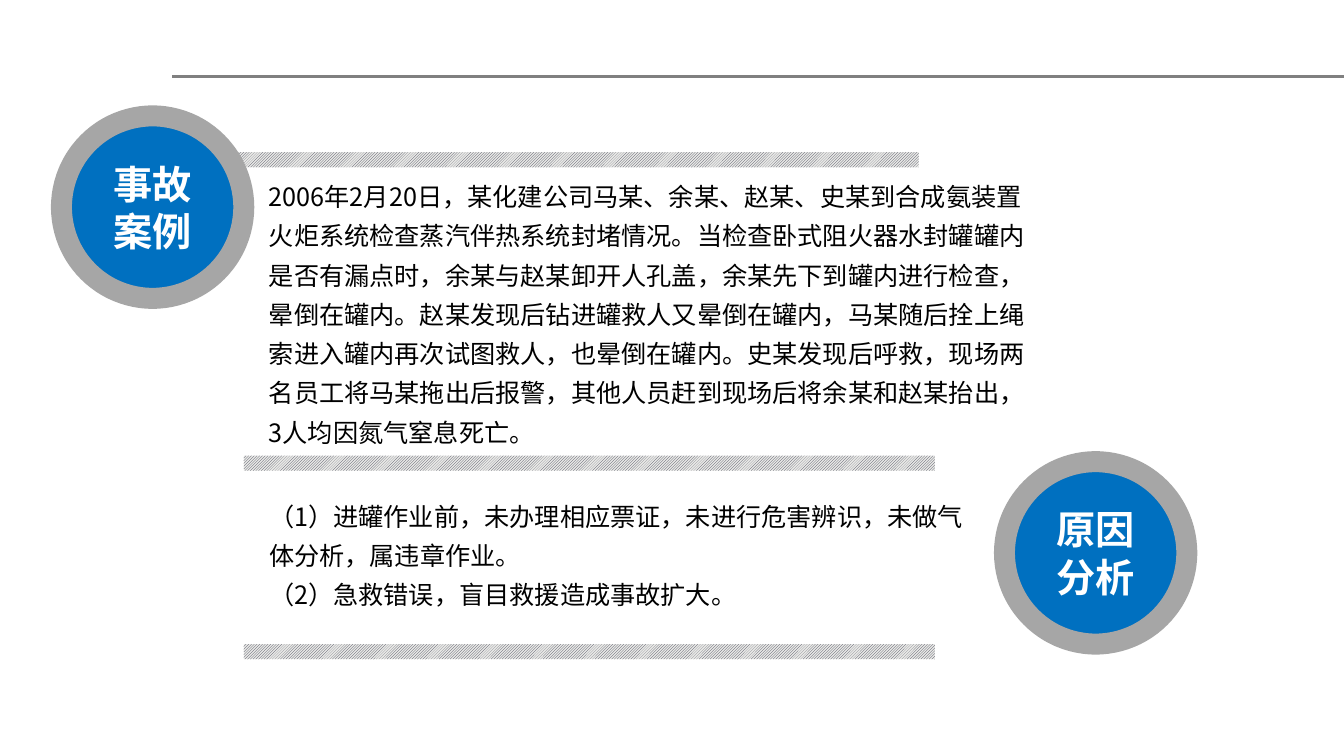
import pptx
import pptx.util
import pptx.dml.color
import pptx.enum.dml
import pptx.enum.shapes
import pptx.enum.text
import pptx.oxml.ns
import lxml.etree

Inches = pptx.util.Inches
Pt = pptx.util.Pt
SHAPE = pptx.enum.shapes.MSO_SHAPE
ALIGN = pptx.enum.text.PP_ALIGN
qn = pptx.oxml.ns.qn

FACE = "Noto Sans CJK SC"
HEX = {"blue": "0070C0", "ring": "A6A6A6", "rule": "808080", "dark": "414455",
       "pale": "E8E8E6", "white": "FFFFFF", "black": "000000"}
RGB = {name: pptx.dml.color.RGBColor.from_string(code) for name, code in HEX.items()}
BADGE = {"size": Pt(28), "bold": True, "name": FACE}
BODY = {"size": Pt(18), "bold": False, "name": FACE}


def write(para, text, look, color, **layout):
    for key, value in layout.items():
        setattr(para, key, value)
    run = para.add_run()
    run.text = text
    for key, value in look.items():
        setattr(run.font, key, value)
    run.font.color.rgb = RGB[color]
    lxml.etree.SubElement(run.font._element, qn("a:ea"), typeface=FACE)


deck = pptx.Presentation()
deck.slide_width, deck.slide_height = Inches(13.34), Inches(7.5)
slide = deck.slides.add_slide(deck.slide_layouts[1])
shapes = slide.shapes
title = shapes.title._element
title.getparent().remove(title)

# Top rule
rule = shapes.add_connector(pptx.enum.shapes.MSO_CONNECTOR.STRAIGHT,
                            Inches(1.71), Inches(0.76), Inches(13.34), Inches(0.76))
rule.line.color.rgb = RGB["rule"]
rule.line.width = Pt(2)
lxml.etree.SubElement(rule._element.spPr, qn("a:effectLst"))

# Hatched bars
for left, top in ((2.26, 1.51), (2.42, 4.52), (2.42, 6.39)):
    bar = shapes.add_shape(SHAPE.RECTANGLE, Inches(left), Inches(top),
                           Inches(6.86), Inches(0.15))
    bar.shadow.inherit = False
    bar.fill.patterned()
    bar.fill.pattern = pptx.enum.dml.MSO_PATTERN.LIGHT_UPWARD_DIAGONAL
    bar.fill.fore_color.rgb = RGB["dark"]
    bar.fill.back_color.rgb = RGB["pale"]
    bar.line.fill.background()

# Round badges
for left, top, label in ((0.61, 1.15, "事故案例"), (9.97, 4.58, "原因分析")):
    disc = shapes.add_shape(SHAPE.OVAL, Inches(left), Inches(top),
                            Inches(1.81), Inches(1.81))
    disc.shadow.inherit = False
    disc.fill.solid()
    disc.fill.fore_color.rgb = RGB["blue"]
    disc.line.color.rgb = RGB["ring"]
    disc.line.width = Pt(15)
    disc.text_frame.vertical_anchor = pptx.enum.text.MSO_ANCHOR.MIDDLE
    write(disc.text_frame.paragraphs[0], label, BADGE, "white", alignment=ALIGN.CENTER)

# Accident story
story = shapes.add_textbox(Inches(2.57), Inches(1.66), Inches(7.71), Inches(2.83))
story.text_frame.word_wrap = True
story.text_frame.auto_size = pptx.enum.text.MSO_AUTO_SIZE.SHAPE_TO_FIT_TEXT
write(story.text_frame.paragraphs[0],
      "2006年2月20日，某化建公司马某、余某、赵某、史某到合成氨装置火炬系统检查蒸汽伴热系统封堵情况。"
      "当检查卧式阻火器水封罐罐内是否有漏点时，余某与赵某卸开人孔盖，余某先下到罐内进行检查，晕倒在罐内。"
      "赵某发现后钻进罐救人又晕倒在罐内，马某随后拴上绳索进入罐内再次试图救人，也晕倒在罐内。"
      "史某发现后呼救，现场两名员工将马某拖出后报警，其他人员赶到现场后将余某和赵某抬出，3人均因氮气窒息死亡。",
      BODY, "black", line_spacing=1.3)

# List of causes
causes = slide.placeholders[1]
causes.left, causes.top = Inches(2.57), Inches(4.83)
causes.width, causes.height = Inches(7.19), Inches(1.27)
frame = causes.text_frame
frame.auto_size = pptx.enum.text.MSO_AUTO_SIZE.SHAPE_TO_FIT_TEXT
for index, text in enumerate((
        "（1）进罐作业前，未办理相应票证，未进行危害辨识，未做气体分析，属违章作业。",
        "（2）急救错误，盲目救援造成事故扩大。")):
    para = frame.add_paragraph() if index else frame.paragraphs[0]
    props = para._p.get_or_add_pPr()
    props.set("marL", "0")
    props.set("indent", "0")
    lxml.etree.SubElement(props, qn("a:buNone"))
    write(para, text, BODY, "black", line_spacing=1.3, space_before=Pt(0))

deck.save("out.pptx")
